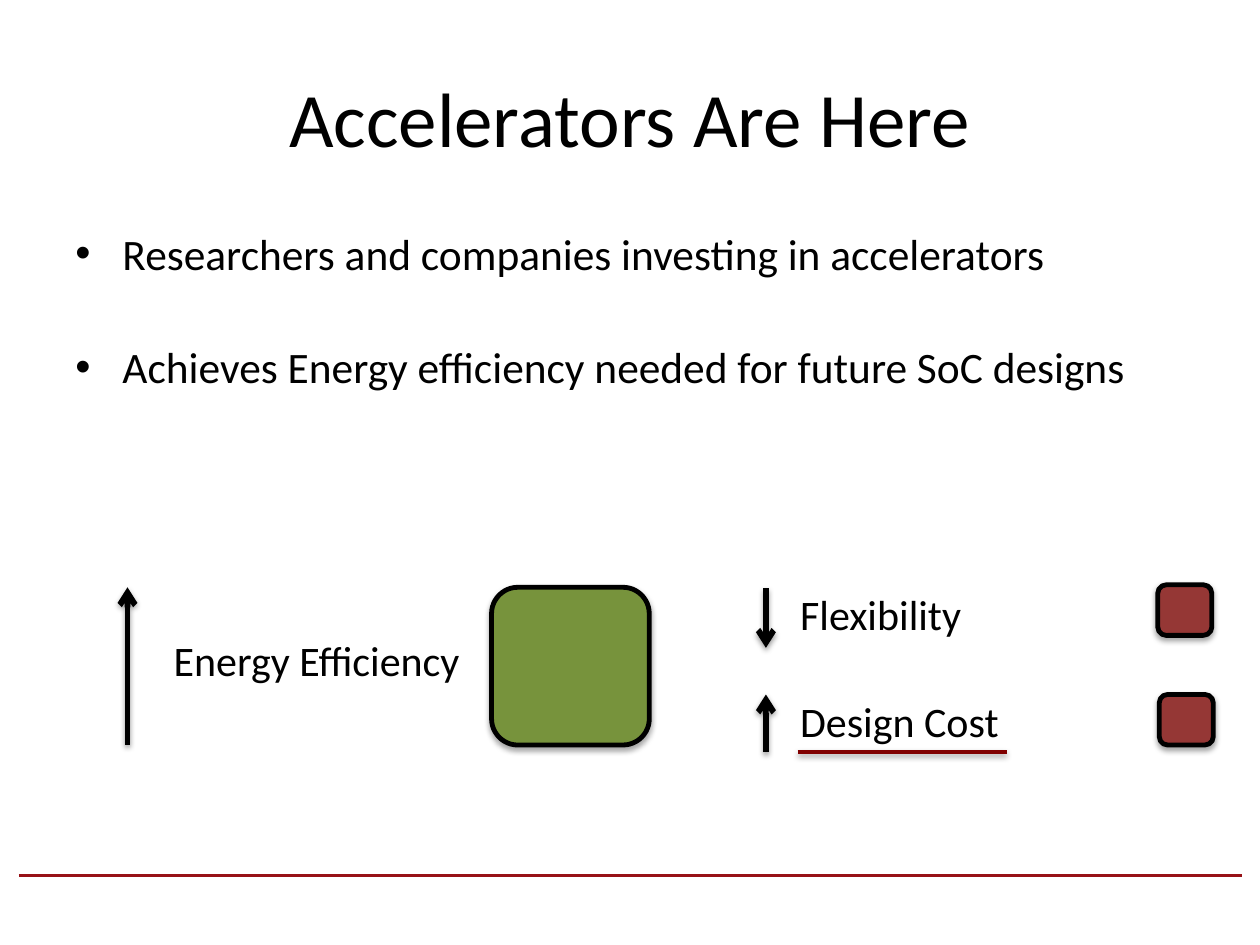
from lxml.etree import SubElement as Sub
from pptx import Presentation
from pptx.dml.color import RGBColor as RGB
from pptx.enum.shapes import MSO_CONNECTOR as Link, MSO_SHAPE as Form
from pptx.enum.text import MSO_ANCHOR as Anchor, PP_ALIGN as Align
from pptx.oxml.ns import qn
from pptx.util import Cm, Pt

BLACK = RGB(0x00, 0x00, 0x00)
GREEN = RGB(0x77, 0x93, 0x3C)
RED = RGB(0x95, 0x37, 0x35)
MAROON = RGB(0x80, 0x00, 0x00)
CRIMSON = RGB(0x97, 0x12, 0x17)


def write(para, text, size=24, font="Calibri", color=BLACK, align=Align.LEFT,
          bullet=False, before=0):
    """Fill a paragraph with formatted text."""
    if bullet:
        props = para._p.get_or_add_pPr()
        props.set("marL", str(Cm(0.95)))
        props.set("indent", str(-Cm(0.95)))
        Sub(props, qn("a:buFont"), typeface="Arial")
        Sub(props, qn("a:buChar"), char="•")
    if before:
        para.space_before = Pt(before)
    para.alignment = align
    para.text = text
    para.font.size = Pt(size)
    para.font.name = font
    para.font.color.rgb = color


class Board:
    """Style and current slide."""

    def __init__(self, deck):
        self.slide = deck.slides.add_slide(deck.slide_layouts[5])
        self.items = self.slide.shapes

    def shade(self, item, dist, alpha):
        props = item._element.spPr
        for old in props.findall(qn("a:effectLst")):
            props.remove(old)
        effect = Sub(props, qn("a:effectLst"))
        if alpha:
            cast = Sub(effect, qn("a:outerShdw"), blurRad=str(Pt(3.15)),
                       dist=str(Pt(dist)), dir="5400000", rotWithShape="0")
            tone = Sub(cast, qn("a:srgbClr"), val=str(BLACK))
            Sub(tone, qn("a:alpha"), val=str(alpha * 1000))

    def title(self, text, x, y, w, h):
        item = self.items.title
        item.left, item.top, item.width, item.height = map(Cm, (x, y, w, h))
        item.text_frame.vertical_anchor = Anchor.MIDDLE
        write(item.text_frame.paragraphs[0], text, size=44, align=Align.CENTER)

    def frame(self, x, y, w, h):
        frame = self.items.add_textbox(*map(Cm, (x, y, w, h))).text_frame
        frame.word_wrap = True
        return frame

    def label(self, text, x, y, w):
        write(self.frame(x, y, w, 1.27).paragraphs[0], text)

    def points(self, texts, x, y, w, h):
        frame = self.frame(x, y, w, h)
        for i, text in enumerate(texts):
            para = frame.add_paragraph() if i else frame.paragraphs[0]
            write(para, text, size=24.8, bullet=True, before=35 if i else 0)

    def block(self, x, y, w, h, fill):
        item = self.items.add_shape(Form.ROUNDED_RECTANGLE, *map(Cm, (x, y, w, h)))
        item.fill.solid()
        item.fill.fore_color.rgb = fill
        item.line.color.rgb = BLACK
        item.line.width = Pt(2.75)
        self.shade(item, 1.8, 35)

    def line(self, x1, y1, x2, y2, color, width=2, alpha=38):
        item = self.items.add_connector(Link.STRAIGHT, *map(Cm, (x1, y1, x2, y2)))
        item.line.color.rgb = color
        item.line.width = Pt(width)
        self.shade(item, 1.6, alpha)
        return item

    def arrow(self, x, start, end):
        item = self.line(x, start, x, end, BLACK, width=3.25)
        Sub(item.line._get_or_add_ln(), qn("a:tailEnd"), type="arrow")


def main():
    deck = Presentation()
    deck.slide_width, deck.slide_height = Cm(25.4), Cm(19.05)
    board = Board(deck)
    board.line(0.38, 17.65, 25.04, 17.65, CRIMSON, alpha=0)
    board.title("Accelerators Are Here", 1.27, 0.76, 22.86, 3.18)
    board.points(["Researchers and companies investing in accelerators",
                  "Achieves Energy efficiency needed for future SoC designs"],
                 1.27, 4.45, 22.86, 6.3)

    board.arrow(2.57, 15.01, 11.84)
    board.label("Energy Efficiency", 3.25, 12.67, 6.4)
    board.block(9.91, 11.84, 3.18, 3.18, GREEN)

    rows = [("Flexibility", 11.73, 11.86, 13.06, 23.34, 11.79),
            ("Design Cost", 13.89, 15.16, 14, 23.37, 14)]
    for text, top, start, end, x, y in rows:
        board.arrow(15.44, start, end)
        board.label(text, 15.88, top, 7.4)
        board.block(x, y, 1.09, 1.02, RED)
    board.line(16.08, 15.16, 20.29, 15.16, MAROON)
    deck.save("out.pptx")


if __name__ == "__main__":
    main()
